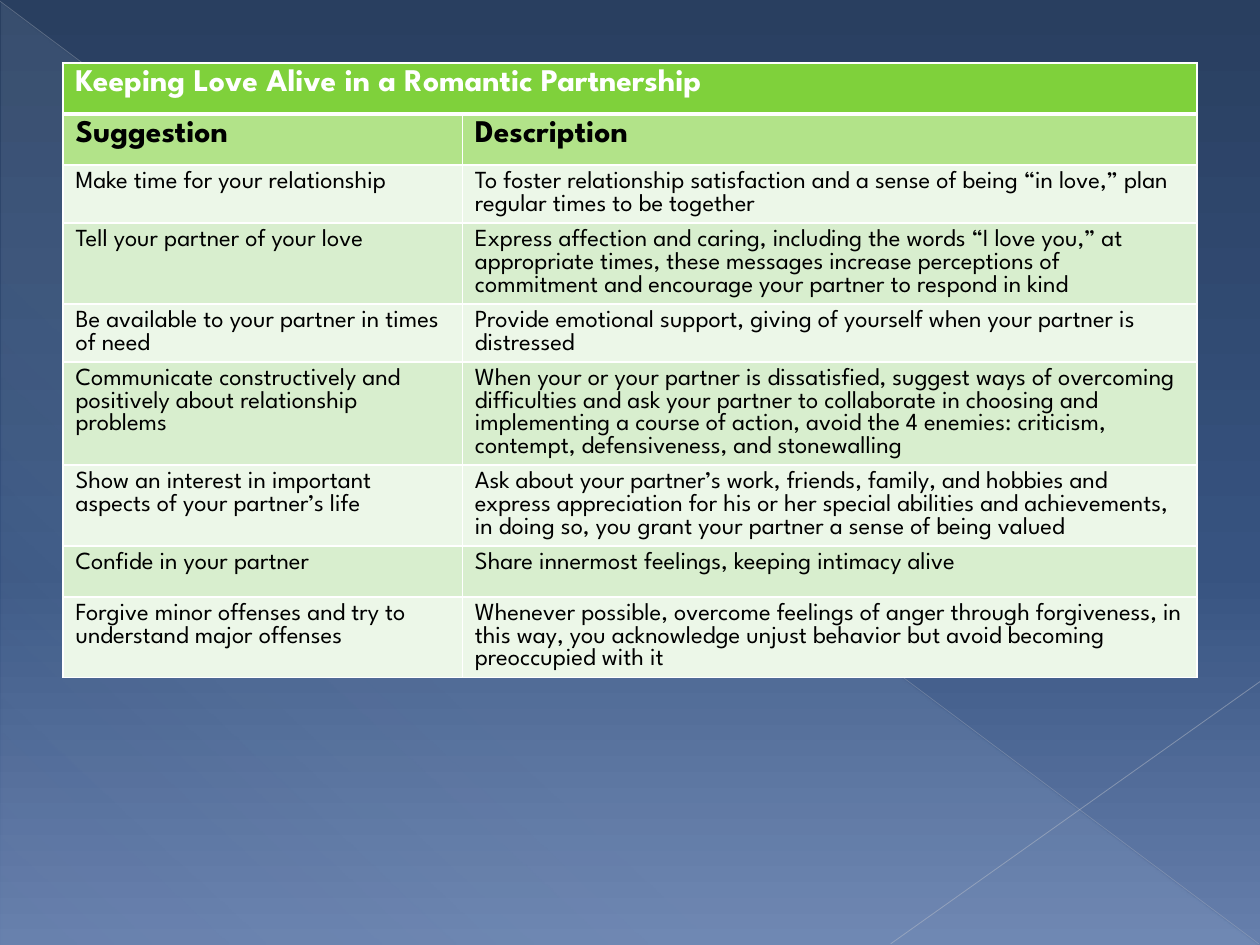
from lxml.etree import SubElement
from pptx import Presentation
from pptx.dml.color import RGBColor
from pptx.enum.shapes import MSO_CONNECTOR, MSO_SHAPE
from pptx.oxml.ns import qn
from pptx.util import Pt

FONT = "League Spartan"
TITLE = "Keeping Love Alive in a Romantic Partnership"
HEADINGS = ("Suggestion", "Description")
SUGGESTIONS = [
    ("Make time for your relationship",
     "To foster relationship satisfaction and a sense of being “in love,” plan "
     "regular times to be together"),
    ("Tell your partner of your love",
     "Express affection and caring, including the words “I love you,” at appropriate "
     "times, these messages increase perceptions of commitment and encourage your "
     "partner to respond in kind"),
    ("Be available to your partner in times of need",
     "Provide emotional support, giving of yourself when your partner is distressed"),
    ("Communicate constructively and positively about relationship problems",
     "When your or your partner is dissatisfied, suggest ways of overcoming "
     "difficulties and ask your partner to collaborate in choosing and implementing "
     "a course of action, avoid the 4 enemies: criticism, contempt, defensiveness, "
     "and stonewalling"),
    ("Show an interest in important aspects of your partner’s life",
     "Ask about your partner’s work, friends, family, and hobbies and express "
     "appreciation for his or her special abilities and achievements, in doing so, "
     "you grant your partner a sense of being valued"),
    ("Confide in your partner",
     "Share innermost feelings, keeping intimacy alive"),
    ("Forgive minor offenses and try to understand major offenses",
     "Whenever possible, overcome feelings of anger through forgiveness, in this "
     "way, you acknowledge unjust behavior but avoid becoming preoccupied with it"),
]


def color(code):
    return RGBColor.from_string(code)


def add_alpha(color_element, percent):
    SubElement(color_element, qn("a:alpha"), val=str(percent * 1000))


def set_gradient(owner, fill, stops, angle):
    fill.gradient()
    fill.gradient_angle = 360 - angle
    stop_list = next(owner.iter(qn("a:gsLst")))
    for old_stop in list(stop_list):
        stop_list.remove(old_stop)
    for position, code, alpha in stops:
        stop = SubElement(stop_list, qn("a:gs"), pos=str(position * 1000))
        add_alpha(SubElement(stop, qn("a:srgbClr"), val=code), alpha)


def add_line(page, start, end, code, width, alpha):
    line = page.shapes.add_connector(
        MSO_CONNECTOR.STRAIGHT, *(Pt(value) for value in start + end))
    line.line.color.rgb = color(code)
    line.line.width = Pt(width)
    properties = line.element.spPr
    add_alpha(next(properties.iter(qn("a:srgbClr"))), alpha)
    SubElement(properties, qn("a:effectLst"))


def draw_backdrop(page, left, top, width, height):
    set_gradient(page.element, page.background.fill,
                 [(0, "293F60", 100), (60, "375380", 100), (100, "667FAC", 100)], 90)
    triangle = page.shapes.add_shape(
        MSO_SHAPE.RIGHT_TRIANGLE, Pt(left + 0.7), Pt(top + 1.4),
        Pt(width - 1.4), Pt(height - 1.4))
    triangle.shadow.inherit = False
    triangle.line.fill.background()
    set_gradient(triangle.element, triangle.fill,
                 [(0, "D6ECFF", 10), (70, "D6ECFF", 8), (100, "D6ECFF", 1)], 133)
    right, bottom = left + width, top + height - 0.7
    add_line(page, (left, top + 0.7), (right - 0.7, bottom), "B7BCC5", 0.39, 35)
    add_line(page, (right, top + 389.5), (left + 509, bottom), "BFC3CB", 0.47, 45)


def set_borders(cell, bottom_width):
    properties = cell._tc.get_or_add_tcPr()
    widths = {"a:lnL": 1, "a:lnR": 1, "a:lnT": 1, "a:lnB": bottom_width}
    for index, (tag, width) in enumerate(widths.items()):
        border = SubElement(properties, qn(tag), w=str(Pt(width)))
        properties.insert(index, border)
        SubElement(SubElement(border, qn("a:solidFill")), qn("a:srgbClr"), val="FFFFFF")


def fill_cell(cell, text, fill, size=14, bold=False, ink="000000", bottom_width=1):
    cell.fill.solid()
    cell.fill.fore_color.rgb = color(fill)
    set_borders(cell, bottom_width)
    cell.text_frame.text = text
    for span in cell.text_frame.paragraphs[0].runs:
        span.font.name = FONT
        span.font.size = Pt(size)
        span.font.bold = bold
        span.font.color.rgb = color(ink)


def draw_table(page, left, top, width, row_height):
    row_count = len(SUGGESTIONS) + 2
    table = page.shapes.add_table(
        row_count, 2, Pt(left), Pt(top), Pt(width), Pt(row_height * row_count)).table
    first_width = 228.2
    table.columns[0].width = Pt(first_width)
    table.columns[1].width = Pt(width - first_width)
    table.cell(0, 0).merge(table.cell(0, 1))
    for column, text in enumerate((TITLE, "")):
        fill_cell(table.cell(0, column), text, "7FD13B", 18, True, "FFFFFF", 3)
    for column, heading in enumerate(HEADINGS):
        fill_cell(table.cell(1, column), heading, "B2E389", 18, True)
    for row, texts in enumerate(SUGGESTIONS, start=2):
        for column, text in enumerate(texts):
            fill_cell(table.cell(row, column), text, ("ECF7E8", "D8EECE")[row % 2])


def main():
    deck = Presentation()
    deck.slide_width, deck.slide_height = Pt(720), Pt(540)
    page = deck.slides.add_slide(deck.slide_layouts[6])
    draw_backdrop(page, 0, 0, 720, 540)
    draw_table(page, 36, 36, 648, 29.2)
    deck.save("out.pptx")


if __name__ == "__main__":
    main()
